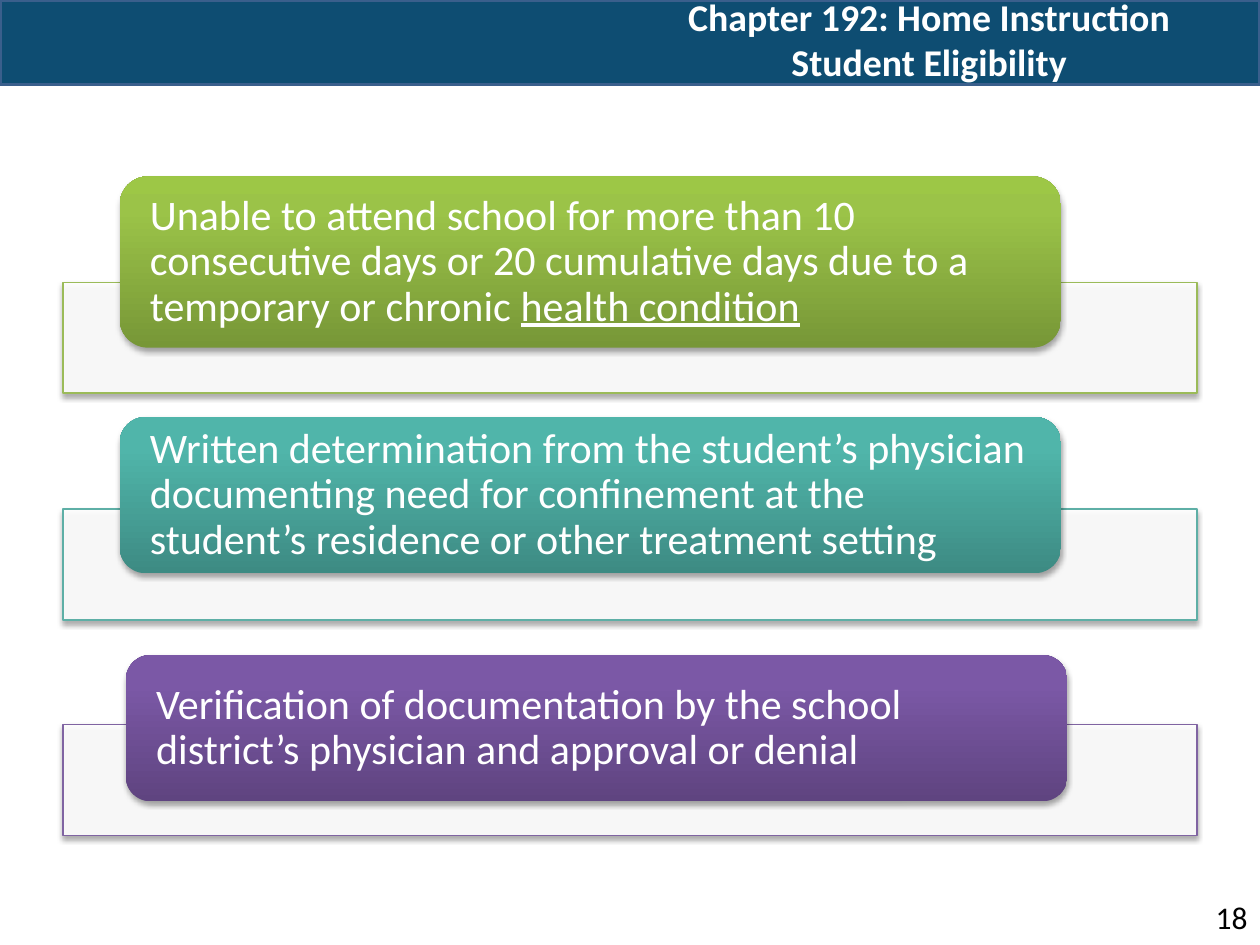
from lxml import etree
from pptx import Presentation
from pptx.dml.color import RGBColor
from pptx.enum import shapes, text
from pptx.oxml import ns
from pptx.util import Inches, Pt

FONT = "Calibri"
COLORS = {"white": "FFFFFF", "black": "000000", "header": "0E4D72", "header_line": "3A5F8C"}
TITLE_LINES = ["Chapter 192: Home Instruction", "Student Eligibility"]
PAGE_NUMBER = "18"

# Each step: runs (text, underlined), panel top, card (left, top, height),
# panel outline, card gradient from bottom to top
STEPS = [
    {"runs": [("Unable to attend school for more than 10 consecutive days or 20 cumulative "
               "days due to a temporary or chronic ", False), ("health condition", True)],
     "panel_top": 2.24, "card": (0.95, 1.4, 1.36),
     "outline": "9BBB59", "gradient": ("779737", "9BC348", "9DC746")},
    {"runs": [("Written determination from the student’s physician documenting need for "
               "confinement at the student’s residence or other treatment setting", False)],
     "panel_top": 4.04, "card": (0.95, 3.31, 1.24),
     "outline": "5EAFA6", "gradient": ("3D8B83", "50B5AA", "4EB8AC")},
    {"runs": [("Verification of documentation by the school district’s physician and "
               "approval or denial", False)],
     "panel_top": 5.75, "card": (1, 5.2, 1.16),
     "outline": "8064A2", "gradient": ("5F4480", "7B58A6", "7C57A8")},
]
PANEL_LEFT, PANEL_WIDTH, PANEL_HEIGHT = 0.5, 9, 0.88
CARD_WIDTH, CARD_INSET = 7.47, 0.24
GRADIENT_STOPS = (0, 80, 100)


def add_box(slide, preset, left, top, width, height):
    box = slide.shapes.add_shape(preset, *map(Inches, (left, top, width, height)))
    box.shadow.inherit = False
    return box


def add_run(paragraph, words, size, color, bold=False, underline=False):
    run = paragraph.add_run()
    run.text = words
    run.font.name, run.font.size = FONT, Pt(size)
    run.font.bold, run.font.underline = bold, underline
    run.font.color.rgb = RGBColor.from_string(COLORS[color])


def set_solid(fill, color):
    fill.solid()
    fill.fore_color.rgb = RGBColor.from_string(color)


def add_color(parent, color, alpha=None):
    node = etree.SubElement(parent, ns.qn("a:srgbClr"), val=color)
    if alpha is not None:
        etree.SubElement(node, ns.qn("a:alpha"), val=str(alpha * 1000))


def add_shadow(box):
    effects = box._element.spPr.find(ns.qn("a:effectLst"))
    shadow = etree.SubElement(effects, ns.qn("a:outerShdw"), blurRad=str(Pt(3.1)),
                              dist=str(Pt(1.8)), dir="5400000", rotWithShape="0")
    add_color(shadow, COLORS["black"], 35)


def set_gradient(box, colors):
    box.fill.gradient()
    gradient = box._element.spPr.find(ns.qn("a:gradFill"))
    stops = gradient.find(ns.qn("a:gsLst"))
    for stop in list(stops):
        stops.remove(stop)
    for position, color in zip(GRADIENT_STOPS, colors):
        stop = etree.SubElement(stops, ns.qn("a:gs"), pos=str(position * 1000))
        add_color(stop, color)
    gradient.find(ns.qn("a:lin")).set("ang", "16200000")  # bottom to top


def add_header(slide):
    band = add_box(slide, shapes.MSO_SHAPE.RECTANGLE, 0, 0, 10, 0.67)
    set_solid(band.fill, COLORS["header"])
    set_solid(band.line.fill, COLORS["header_line"])
    band.line.width = Pt(2)
    slide.shapes._spTree.insert(2, band._element)  # behind the title

    title = slide.shapes.title
    title.left, title.top, title.width, title.height = map(Inches, (4.75, 0, 5.25, 0.62))
    frame = title.text_frame
    frame.auto_size = text.MSO_AUTO_SIZE.NONE
    frame.vertical_anchor = text.MSO_ANCHOR.MIDDLE
    heading = frame.paragraphs[0]
    heading.alignment = text.PP_ALIGN.CENTER
    for index, line in enumerate(TITLE_LINES):
        if index:
            heading.add_line_break()
        add_run(heading, line, 21.6, "white", bold=True)


def add_step(slide, step):
    # Wide panel behind the card
    panel = add_box(slide, shapes.MSO_SHAPE.RECTANGLE, PANEL_LEFT, step["panel_top"],
                    PANEL_WIDTH, PANEL_HEIGHT)
    set_solid(panel.fill, COLORS["white"])
    panel_color = panel._element.spPr.find(ns.qn("a:solidFill"))[0]
    etree.SubElement(panel_color, ns.qn("a:alpha"), val="90000")
    set_solid(panel.line.fill, step["outline"])
    panel.line.width = Pt(0.75)
    add_shadow(panel)

    # Card with the requirement
    left, top, height = step["card"]
    card = add_box(slide, shapes.MSO_SHAPE.ROUNDED_RECTANGLE, left, top, CARD_WIDTH, height)
    set_gradient(card, step["gradient"])
    card.line.fill.background()
    add_shadow(card)

    # Requirement text spans the full card width
    label = slide.shapes.add_textbox(*map(Inches, (left, top, CARD_WIDTH, height)))
    frame = label.text_frame
    frame.word_wrap = True
    frame.vertical_anchor = text.MSO_ANCHOR.MIDDLE
    frame.margin_left = frame.margin_right = Inches(CARD_INSET)
    frame.margin_top = frame.margin_bottom = 0
    requirement = frame.paragraphs[0]
    requirement.line_spacing = 0.9
    for words, underline in step["runs"]:
        add_run(requirement, words, 24, "white", underline=underline)


def add_page_number(slide):
    number = slide.shapes.add_textbox(*map(Inches, (9.33, 7.08, 0.67, 0.4)))
    number.text_frame.word_wrap = True
    paragraph = number.text_frame.paragraphs[0]
    paragraph.alignment = text.PP_ALIGN.RIGHT
    add_run(paragraph, PAGE_NUMBER, 18, "black")


def main():
    deck = Presentation()
    deck.slide_width, deck.slide_height = Inches(10), Inches(7.5)
    slide = deck.slides.add_slide(deck.slide_layouts.get_by_name("Title Only"))
    add_header(slide)
    for step in STEPS:
        add_step(slide, step)
    add_page_number(slide)
    deck.save("out.pptx")


if __name__ == "__main__":
    main()
